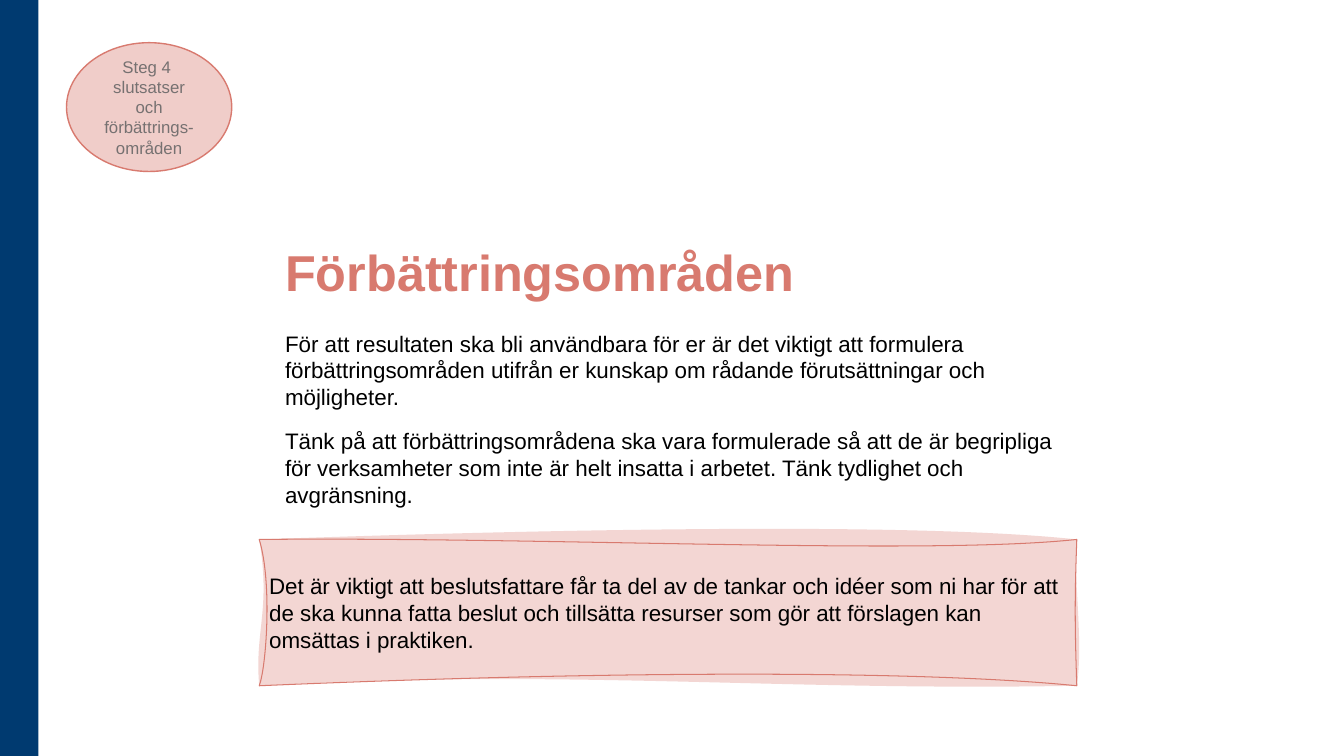
import pptx
import pptx.dml.color
import pptx.enum.shapes
import pptx.enum.text
import pptx.oxml
import pptx.oxml.ns
import pptx.util

Pt = pptx.util.Pt
SHAPE = pptx.enum.shapes.MSO_SHAPE
ANCHOR = pptx.enum.text.MSO_ANCHOR
ALIGN = pptx.enum.text.PP_ALIGN

NAVY, CORAL, GREY, BLACK = "003A70", "D87A6F", "767171", "000000"

# Two control points for each side (top, right, bottom, left), from the box corner
EDGE = [
    [(205, -2), (477, 11.5)],
    [(582.5, 41), (582.5, 60.5)],
    [(474, 93.5), (255, 93.5)],
    [(5, 91.5), (9.5, 31)],
]
WASH = [
    [(227.5, -8), (472.5, -12)],
    [(581, 24), (589, 72)],
    [(366.5, 108.5), (218, 92)],
    [(-3.5, 65.5), (8.5, 50.5)],
]


def color(code):
    return pptx.dml.color.RGBColor.from_string(code)


def paint(shape, fill, line=None, width=1, alpha=100):
    shape.shadow.inherit = False
    shape.fill.solid()
    shape.fill.fore_color.rgb = color(fill)
    if alpha < 100:
        tint = shape.fill._xPr.find(".//" + pptx.oxml.ns.qn("a:srgbClr"))
        tint.append(pptx.oxml.parse_xml(
            f'<a:alpha {pptx.oxml.ns.nsdecls("a")} val="{alpha * 1000}"/>'))
    if line:
        shape.line.color.rgb = color(line)
        shape.line.width = Pt(width)
    else:
        shape.line.fill.background()


def write(shape, texts, size, code, anchor, align=ALIGN.LEFT, bold=False):
    frame = shape.text_frame
    frame.word_wrap = True
    frame.auto_size = pptx.enum.text.MSO_AUTO_SIZE.NONE
    frame.vertical_anchor = anchor
    for i, text in enumerate(texts):
        para = frame.add_paragraph() if i else frame.paragraphs[0]
        para.text = text
        para.alignment = align
        para.line_spacing = 1.0
        para.space_before = Pt(12 if i else 0)
        font = para.font
        font.name, font.size, font.bold = "Arial", Pt(size), bold
        font.color.rgb = color(code)


def trace(size, sides, flag):
    """Return a closed path whose four sides are cubic curves."""
    def dot(point):
        x, y = map(Pt, point)
        return f'<a:pt x="{x}" y="{y}"/>'

    width, height = size
    ends = [(width, 0), (width, height), (0, height), (0, 0)]
    curves = "".join(
        "<a:cubicBezTo>" + "".join(map(dot, [*side, end])) + "</a:cubicBezTo>"
        for side, end in zip(sides, ends))
    return pptx.oxml.parse_xml(
        f'<a:path {pptx.oxml.ns.nsdecls("a")} w="{Pt(width)}" '
        f'h="{Pt(height)}" {flag}><a:moveTo>{dot((0, 0))}</a:moveTo>'
        f'{curves}<a:close/></a:path>')


def sheet(slide, box):
    """Draw a box with a curved edge and a differently curved wash."""
    left, top, width, height = box
    right, base = left + width, top + height
    pen = slide.shapes.build_freeform(Pt(left), Pt(top))
    pen.add_line_segments([(Pt(x), Pt(y)) for x, y in
                           [(right, top), (right, base), (left, base)]])
    shape = pen.convert_to_shape()
    paths = shape._element.spPr.find(".//" + pptx.oxml.ns.qn("a:pathLst"))
    paths[:] = [trace((width, height), EDGE, 'fill="none"'),
                trace((width, height), WASH, 'stroke="0"')]
    return shape


def band(slide, box):
    paint(slide.shapes.add_shape(SHAPE.RECTANGLE, *map(Pt, box)), NAVY)


def badge(slide, box):
    oval = slide.shapes.add_shape(SHAPE.OVAL, *map(Pt, box))
    paint(oval, CORAL, CORAL, 1, 37)
    write(oval, ["Steg 4 \vslutsatser och förbättrings- områden"],
          12, GREY, ANCHOR.MIDDLE, ALIGN.CENTER)


def title(slide, box):
    head = slide.shapes.title
    head.left, head.top, head.width, head.height = map(Pt, box)
    write(head, ["Förbättringsområden"], 36, CORAL, ANCHOR.BOTTOM, bold=True)


def body(slide, box):
    area = slide.shapes.add_textbox(*map(Pt, box))
    write(area, [
        "För att resultaten ska bli användbara för er är det viktigt att "
        "formulera förbättringsområden utifrån er kunskap om rådande "
        "förutsättningar och möjligheter.",
        "Tänk på att förbättringsområdena ska vara formulerade så att de är "
        "begripliga för verksamheter som inte är helt insatta i arbetet. "
        "Tänk tydlighet och avgränsning.",
    ], 16, BLACK, ANCHOR.TOP)


def callout(slide, box):
    note = sheet(slide, box)
    paint(note, CORAL, CORAL, 0.75, 30)
    write(note, [
        "Det är viktigt att beslutsfattare får ta del av de tankar och idéer "
        "som ni har för att de ska kunna fatta beslut och tillsätta resurser "
        "som gör att förslagen kan omsättas i praktiken.",
    ], 16, BLACK, ANCHOR.MIDDLE)


def main():
    deck = pptx.Presentation()
    deck.slide_width, deck.slide_height = Pt(960), Pt(540)
    slide = deck.slides.add_slide(deck.slide_layouts[5])
    band(slide, (0, 0, 27.5, 540))
    title(slide, (196.5, 115, 566.5, 104))
    body(slide, (196.5, 232, 578, 219))
    badge(slide, (47.5, 30.5, 118, 92))
    callout(slide, (185.2, 385.3, 584, 104.5))
    deck.save("out.pptx")


if __name__ == "__main__":
    main()
